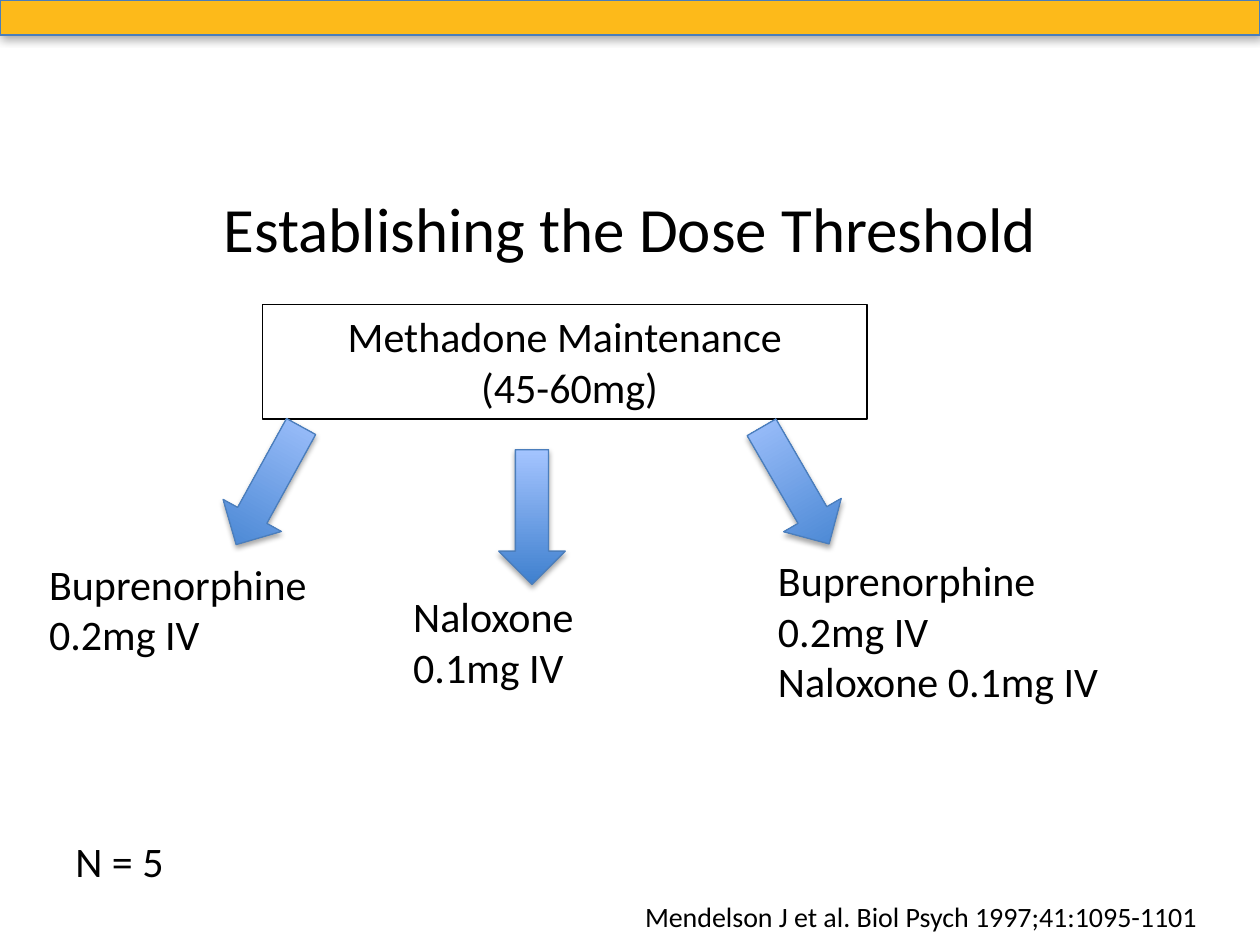
from lxml import etree
from pptx import Presentation
from pptx.dml.color import RGBColor
from pptx.enum import shapes, text
from pptx.oxml.ns import qn
from pptx.util import Pt

FONT = "Calibri"
LEFT, CENTER = text.PP_ALIGN.LEFT, text.PP_ALIGN.CENTER
TOP, MIDDLE = text.MSO_ANCHOR.TOP, text.MSO_ANCHOR.MIDDLE

TITLE = ["Establishing the Dose Threshold"]
MAINTENANCE = ["Methadone Maintenance", " (45-60mg)"]
SAMPLE = ["N = 5"]
CITATION = ["Mendelson J et al. Biol Psych 1997;41:1095-1101"]
ARMS = [
    (["Buprenorphine", "0.2mg IV"], (21, 315.5, 168.5, 65.5), 239, 28.8),
    (["Naloxone", "0.1mg IV"], (229, 334, 109, 65.5), 257, 0),
    (["Buprenorphine", "0.2mg IV", "Naloxone 0.1mg IV"],
     (437.5, 313.5, 199, 94.5), 239, 329.9),
]
ARROW_LEFT, ARROW_STEP, ARROW_W, ARROW_H = 134.5, 150.5, 38, 77


def color(value):
    return RGBColor.from_string(value)


def add_lines(box, lines, size=24, align=LEFT, anchor=TOP, wrap=True):
    tf = box.text_frame
    tf.word_wrap = wrap
    tf.vertical_anchor = anchor
    tf.text = "\n".join(lines)
    for p in tf.paragraphs:
        p.alignment = align
        for r in p.runs:
            r.font.name = FONT
            r.font.size = Pt(size)
            r.font.color.rgb = color("000000")


def add_label(s, at, lines, **style):
    add_lines(s.shapes.add_textbox(*map(Pt, at)), lines, **style)


def add_box(s, kind, at, line):
    sp = s.shapes.add_shape(kind, *map(Pt, at))
    sp.shadow.inherit = False
    sp.line.color.rgb = color(line)
    sp.line.width = Pt(0.75)
    return sp


def add_shadow(sp, blur):
    effects = sp._element.spPr.find(qn("a:effectLst"))
    shadow = etree.SubElement(effects, qn("a:outerShdw"), blurRad=str(Pt(blur)),
                              dist=str(Pt(1.8)), dir="5400000", rotWithShape="0")
    black = etree.SubElement(shadow, qn("a:srgbClr"), val="000000")
    etree.SubElement(black, qn("a:alpha"), val="35000")


def add_arrow(s, left, top, rotation):
    sp = add_box(s, shapes.MSO_SHAPE.DOWN_ARROW, (left, top, ARROW_W, ARROW_H), "4B7EBC")
    sp.rotation = rotation
    sp.fill.gradient()
    sp.fill.gradient_angle = 90
    for stop, shade in zip(sp.fill.gradient_stops, ("3F80CE", "A4C4FF")):
        stop.color.rgb = color(shade)
    add_shadow(sp, 3.1)


def main():
    prs = Presentation()
    prs.slide_width, prs.slide_height = Pt(720), Pt(540)
    s = prs.slides.add_slide(prs.slide_layouts[6])

    band = add_box(s, shapes.MSO_SHAPE.RECTANGLE, (0, 0, 720, 20), "4A7EBB")
    band.fill.solid()
    band.fill.fore_color.rgb = color("FDBA1A")
    add_shadow(band, 5)

    add_label(s, (36, 90, 648, 80), TITLE, size=36, align=CENTER, anchor=MIDDLE)
    add_label(s, (361.5, 510.5, 342, 26.5), CITATION, size=16)

    maintenance = add_box(s, shapes.MSO_SHAPE.RECTANGLE, (150, 174, 345.5, 65.5), "000000")
    maintenance.fill.background()
    add_lines(maintenance, MAINTENANCE, align=CENTER)

    add_label(s, (36, 474, 165.5, 36), SAMPLE)
    for i, (lines, at, top, rotation) in enumerate(ARMS):
        add_arrow(s, ARROW_LEFT + i * ARROW_STEP, top, rotation)
        add_label(s, at, lines, wrap=False)

    prs.save("out.pptx")


if __name__ == "__main__":
    main()
